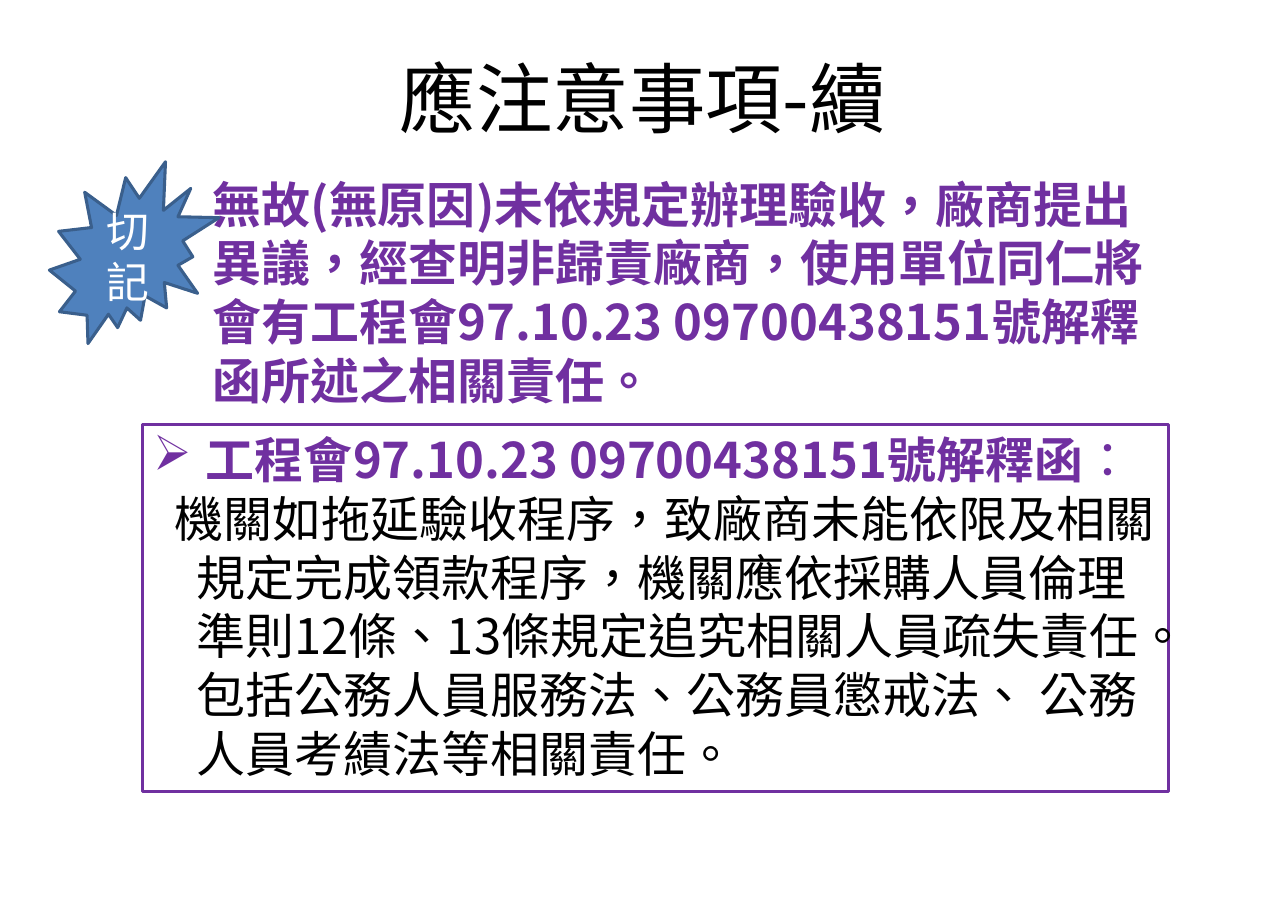
from lxml import etree
from pptx import Presentation
from pptx.dml.color import RGBColor
from pptx.enum.shapes import MSO_SHAPE
from pptx.enum.text import MSO_ANCHOR, PP_ALIGN
from pptx.oxml.ns import qn
from pptx.util import Cm, Pt

RECT = MSO_SHAPE.RECTANGLE
SEAL = MSO_SHAPE.EXPLOSION2
MIDDLE, TOP = MSO_ANCHOR.MIDDLE, MSO_ANCHOR.TOP
CENTER, LEFT = PP_ALIGN.CENTER, PP_ALIGN.LEFT

COLORS = {
    "black": "000000",
    "white": "FFFFFF",
    "purple": "7030A0",
    "blue": "4F81BD",
    "dark_blue": "3A5F8C",
}
SC, TC = "Noto Sans CJK SC", "Noto Sans CJK TC"


def rgb(name):
    return RGBColor.from_string(COLORS[name])


def add_run(p, text, size, color, font=SC, bold=False):
    r = p.add_run()
    r.text = text
    r.font.size = Pt(size)
    r.font.bold = bold
    r.font.color.rgb = rgb(color)
    r.font.name = font
    # East Asian font and language
    rPr = r.font._element
    rPr.set("lang", "zh-TW")
    etree.SubElement(rPr, qn("a:ea"), typeface=font)


def set_indent(p, left, first, bullet=None):
    pPr = p._p.get_or_add_pPr()
    pPr.set("marL", str(Cm(left)))
    pPr.set("indent", str(Cm(first)))
    if bullet:
        etree.SubElement(pPr, qn("a:buChar"), char=bullet)


def add_text(slide, box, anchor=TOP):
    tf = slide.shapes.add_textbox(*map(Cm, box)).text_frame
    tf.word_wrap = True
    tf.vertical_anchor = anchor
    return tf


def add_outlined(slide, kind, box, line, fill=None):
    sp = slide.shapes.add_shape(kind, *map(Cm, box))
    sp.shadow.inherit = False
    if fill:
        sp.fill.solid()
        sp.fill.fore_color.rgb = rgb(fill)
    else:
        sp.fill.background()
    sp.line.color.rgb = rgb(line)
    sp.line.width = Pt(2)
    sp.text_frame.word_wrap = True
    return sp.text_frame


def add_title(slide, box):
    p = add_text(slide, box, MIDDLE).paragraphs[0]
    p.alignment = CENTER
    add_run(p, "應注意事項-續", 50, "black", TC)


def add_ruling(slide, box):
    tf = add_outlined(slide, RECT, box, "purple")
    tf.vertical_anchor = TOP
    # Heading with arrow bullet
    p = tf.paragraphs[0]
    p.alignment = LEFT
    set_indent(p, 1.22, -1.22, "➢")
    add_run(p, "工程會97.10.23 09700438151號解釋函", 32, "purple", bold=True)
    add_run(p, "：", 32, "purple")
    # Body of the ruling
    p = tf.add_paragraph()
    p.alignment = LEFT
    set_indent(p, 1, -0.5)
    add_run(p, "機關如拖延驗收程序，致廠商未能依限及相關規定完成領款程序，"
               "機關應依採購人員倫理準則12條、13條規定追究相關人員疏失責任。"
               "包括公務人員服務法、公務員懲戒法、 公務人員考績法等相關責任。",
            32, "black")


def add_warning(slide, box):
    p = add_text(slide, box).paragraphs[0]
    for text, font in (
        ("無故(無原因)未依規定辦理驗收，廠商提出異議，經查明非歸責廠商", SC),
        ("，", TC),
        ("使用單位同仁將會有工程會97.10.23 09700438151號解釋函所述之相關責任。", SC),
    ):
        add_run(p, text, 32, "purple", font, bold=True)


def add_seal(slide, box):
    tf = add_outlined(slide, SEAL, box, "dark_blue", "blue")
    tf.vertical_anchor = MIDDLE
    p = tf.paragraphs[0]
    p.alignment = CENTER
    add_run(p, "切記", 28, "white")


def main():
    prs = Presentation()
    prs.slide_width, prs.slide_height = Cm(29.7), Cm(21)
    slide = prs.slides.add_slide(prs.slide_layouts[6])
    add_title(slide, (1.45, 0.71, 26.75, 3.05))
    add_ruling(slide, (3.28, 9.78, 23.67, 8.46))
    add_warning(slide, (4.65, 3.89, 22.4, 5.74))
    add_seal(slide, (1.14, 3.73, 3.91, 4.19))
    prs.save("out.pptx")


if __name__ == "__main__":
    main()
